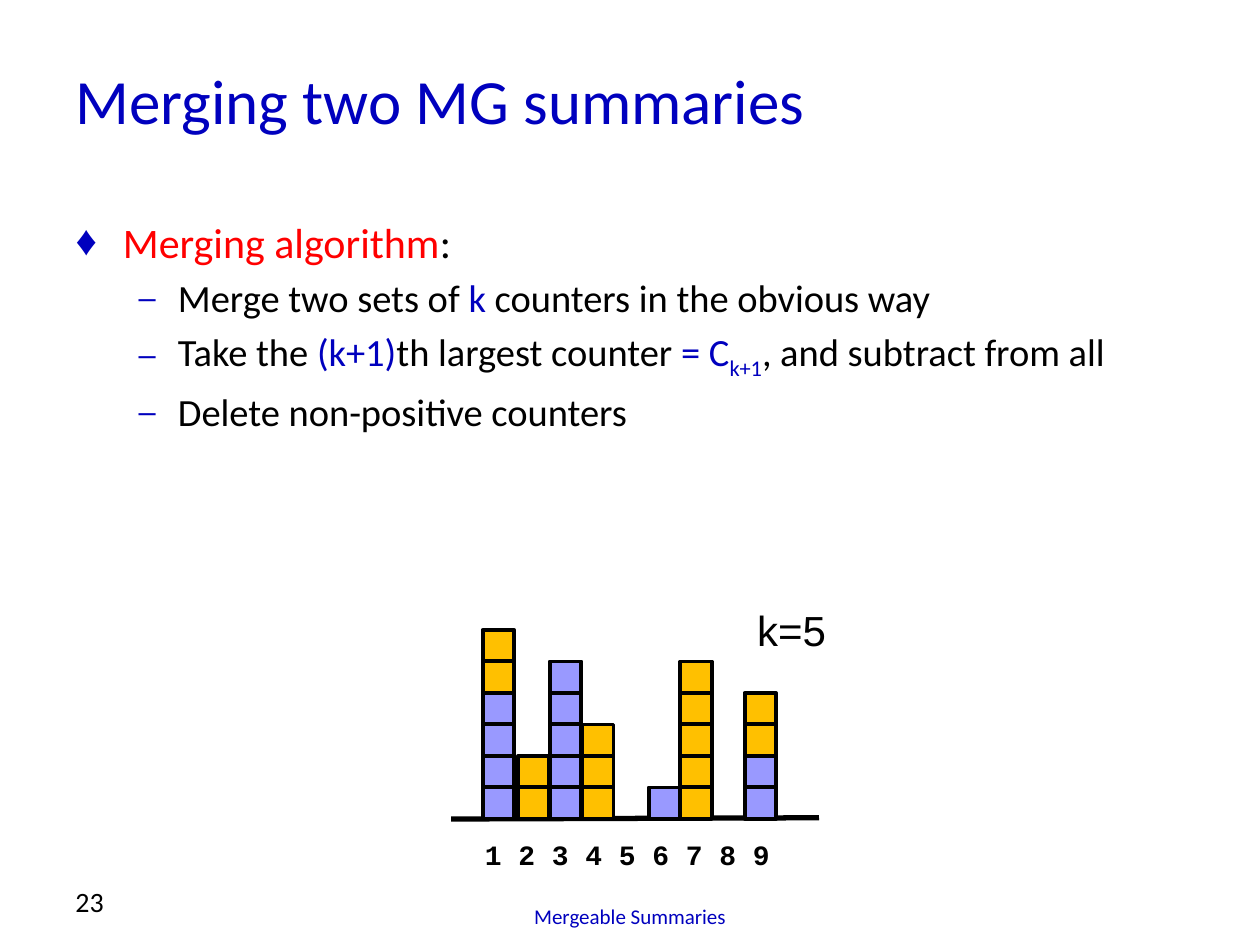
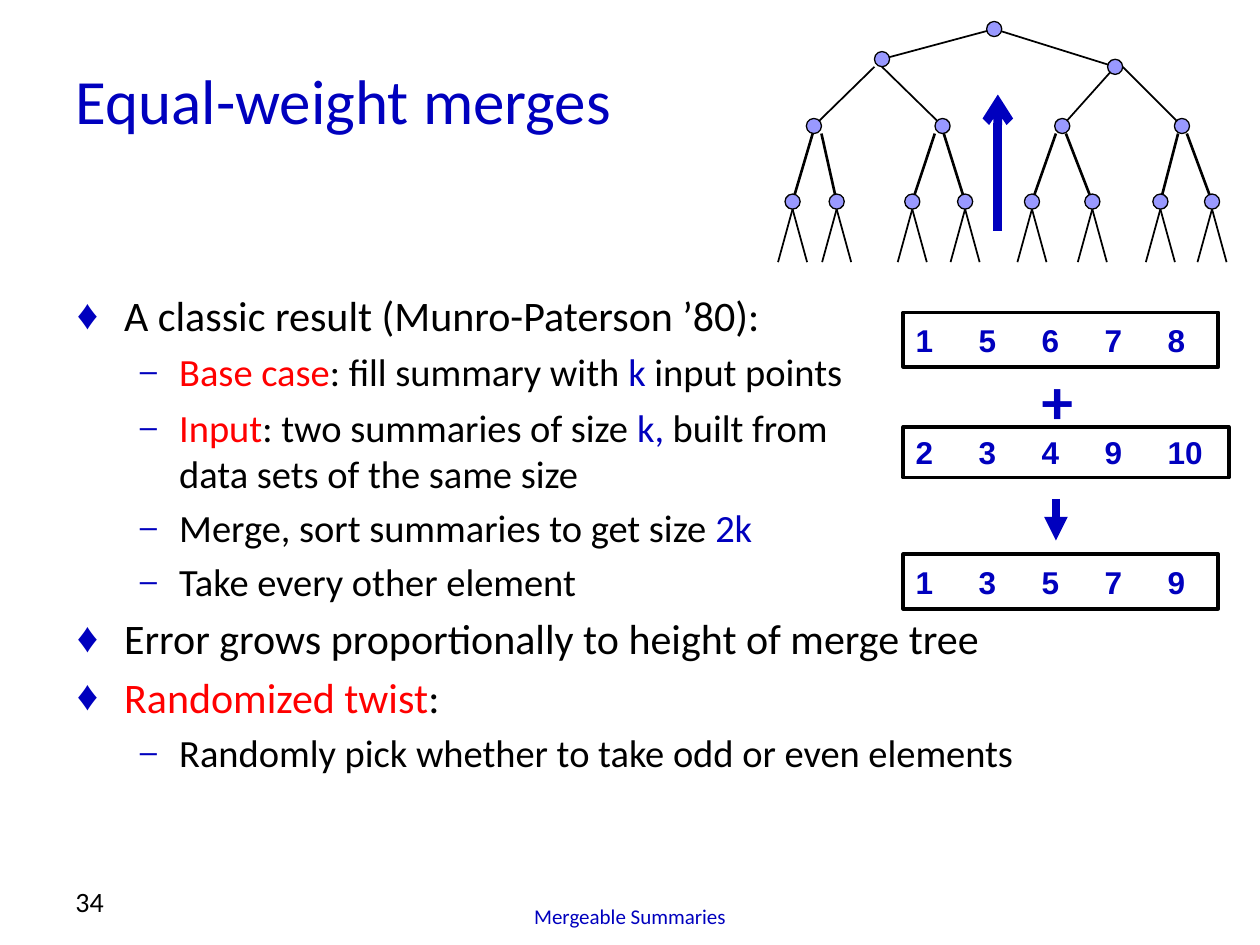
from lxml.etree import SubElement
from pptx import Presentation
from pptx.dml.color import RGBColor
from pptx.enum.shapes import MSO_CONNECTOR, MSO_SHAPE
from pptx.enum.text import MSO_ANCHOR, MSO_AUTO_SIZE, PP_ALIGN
from pptx.oxml.ns import qn
from pptx.util import Pt

# ---- Shared style ----
COLORS = {"blue": "0000BE", "red": "FF0000", "black": "000000",
          "lilac": "9999FF", "amber": "FFC000"}
FOOTER = "Mergeable Summaries"
TITLE_BOX = (36, 24, 684, 66)
FOOTER_BOX = (186, 498, 348, 36)
NUMBER_BOX = (36, 492, 168, 36)
# per level: text size, left margin, hanging indent, bullet, bullet size in percent
LEVELS = [(24, 27, 27, "♦", 100), (22, 58.5, 22.5, "–", 80)]

# ---- Content: (level, spans); a span is black text or (text, colour) ----
MERGING = {
    "title": "Merging two MG summaries", "number": "23",
    "body_box": (36, 120, 648, 180),
    "body": [
        (0, [("Merging algorithm", "red"), ":"]),
        (1, ["Merge two sets of ", ("k", "blue"), " counters in the obvious way"]),
        (1, ["Take the ", ("(k+1)", "blue"), "th largest counter ", ("= C", "blue"),
             ("k+1", "blue", "subscript"), ", and subtract from all"]),
        (1, ["Delete non-positive counters"]),
    ],
}
EQUAL_WEIGHT = {
    "title": "Equal-weight merges", "number": "34",
    "body_box": (36.7, 162, 648, 342),
    "body": [
        (0, ["A classic result (Munro-Paterson ’80):"]),
        (1, [("Base case", "red"), ": fill summary with ", ("k", "blue"), " input points"]),
        (1, [("Input", "red"), ": two summaries of size ", ("k,", "blue"), " built from",
             "\n", "data sets of the same size"]),
        (1, ["Merge, sort summaries to get size ", ("2k", "blue")]),
        (1, ["Take every other element"]),
        (0, ["Error grows proportionally to height of merge tree"]),
        (0, [("Randomized twist", "red"), ":"]),
        (1, ["Randomly pick whether to take odd or even elements"]),
    ],
}

# Counter stacks: (left edge, lilac cells, amber cells)
STACKS = [(275.8, 4, 2), (296, 0, 2), (314.2, 5, 0), (332.6, 0, 3),
          (370.8, 1, 0), (388.8, 0, 5), (425.5, 2, 2)]
CELL, BASELINE = 18, 468

# Summaries: (values, top, width, height)
SUMMARIES = [([1, 5, 6, 7, 8], 178.6, 180, 31),
             ([2, 3, 4, 9, 10], 244.1, 186, 28.8),
             ([1, 3, 5, 7, 9], 316.8, 180, 31)]
SUMMARY_LEFT, TAB_GAP = 516.2, 36

# Merge tree: (node x, x where its edge meets the parent), level by level
LEAVES = [(452.9, 464.4), (478.1, 469.4), (521.3, 534.2), (551.5, 539.3),
          (589.7, 603.4), (624.2, 609.1), (663.1, 673.2), (692.6, 678.2)]
MIDDLE = [(465.1, 499.7), (538.6, 504), (607, 637.2), (675.4, 641.5)]
UPPER = [(504, 33.8), (637.2, 38.2)]  # (x, y)
ROOT = (568.1, 16.6)
LEAF_Y, MIDDLE_Y, NODE = 115.2, 72, 8.64
TWIG_SPREAD, TWIG_BOTTOM = 8.3, 149.8


def rgb(name):
    return RGBColor.from_string(COLORS[name])


def style(span, size, color="black", font="Calibri", bold=False):
    span.font.size, span.font.name, span.font.bold = Pt(size), font, bold
    span.font.color.rgb = rgb(color)


def place(shape, box):
    shape.left, shape.top, shape.width, shape.height = map(Pt, box)


def add_label(page, text, box, size, color="black", font="Calibri", bold=False,
              anchor=MSO_ANCHOR.TOP, align=PP_ALIGN.LEFT):
    frame = page.shapes.add_textbox(*map(Pt, box)).text_frame
    frame.word_wrap = True
    frame.vertical_anchor = anchor
    frame.text = text
    para = frame.paragraphs[0]
    para.alignment = align
    style(para.runs[0], size, color, font, bold)


def add_box(shapes, kind, box, fill, line_width):
    shape = shapes.add_shape(kind, *map(Pt, box))
    shape.shadow.inherit = False
    if fill:
        shape.fill.solid()
        shape.fill.fore_color.rgb = rgb(fill)
    else:
        shape.fill.background()
    shape.line.color.rgb = rgb("black")
    shape.line.width = Pt(line_width)
    return shape


def add_line(shapes, start, end, width, color="black", head=None):
    line = shapes.add_connector(MSO_CONNECTOR.STRAIGHT, *map(Pt, (*start, *end)))
    line.line.color.rgb = rgb(color)
    line.line.width = Pt(width)
    properties = line._element.spPr
    if head:
        SubElement(properties.find(qn("a:ln")), qn("a:tailEnd"), type=head)
    SubElement(properties, qn("a:effectLst"))


def set_bullet(para, margin, hang, symbol, percent):
    props = para._p.get_or_add_pPr()
    props.set("marL", str(Pt(margin)))
    props.set("indent", str(-Pt(hang)))
    color = SubElement(props, qn("a:buClr"))
    SubElement(color, qn("a:srgbClr"), val=COLORS["blue"])
    SubElement(props, qn("a:buSzPct"), val=str(percent * 1000))
    SubElement(props, qn("a:buChar"), char=symbol)


def fill_body(frame, items):
    frame.auto_size = MSO_AUTO_SIZE.NONE
    for index, (level, spans) in enumerate(items):
        para = frame.add_paragraph() if index else frame.paragraphs[0]
        para.level = level
        size, *bullet = LEVELS[level]
        set_bullet(para, *bullet)
        for item in spans:
            if item == "\n":
                para.add_line_break()
                continue
            text, color, *script = (item, "black") if isinstance(item, str) else item
            span = para.add_run()
            span.text = text
            style(span, size, color)
            if script:
                span._r.get_or_add_rPr().set("baseline", "-25000")


def add_page(deck, content):
    page = deck.slides.add_slide(deck.slide_layouts[1])
    add_label(page, FOOTER, FOOTER_BOX, 12, "blue",
              anchor=MSO_ANCHOR.BOTTOM, align=PP_ALIGN.CENTER)
    add_label(page, content["number"], NUMBER_BOX, 16, anchor=MSO_ANCHOR.BOTTOM)
    title, body = page.shapes.title, page.placeholders[1]
    place(title, TITLE_BOX)
    title.text_frame.text = content["title"]
    title.text_frame.vertical_anchor = MSO_ANCHOR.MIDDLE
    para = title.text_frame.paragraphs[0]
    para.alignment = PP_ALIGN.LEFT
    style(para.runs[0], 36, "blue")
    place(body, content["body_box"])
    fill_body(body.text_frame, content["body"])
    return page


def draw_counters(page):
    add_line(page.shapes, (257.8, BASELINE), (468, BASELINE - 0.7), 3)
    for left, lilac, amber in STACKS:
        for row, fill in enumerate(["lilac"] * lilac + ["amber"] * amber, start=1):
            add_box(page.shapes, MSO_SHAPE.RECTANGLE,
                    (left, BASELINE - row * CELL, CELL, CELL), fill, 2.25)
    add_label(page, "1 2 3 4 5 6 7 8 9", (270, 475.2, 189.4, 26.6), 16,
              font="Courier New", bold=True)
    add_label(page, "k=5", (425.5, 342, 60, 36), 24, font="Arial")


def draw_summaries(page):
    for values, top, width, height in SUMMARIES:
        box = add_box(page.shapes, MSO_SHAPE.RECTANGLE,
                      (SUMMARY_LEFT, top, width, height), None, 2.25)
        box.text_frame.text = "\t".join(map(str, values))
        para = box.text_frame.paragraphs[0]
        para.alignment = PP_ALIGN.LEFT
        style(para.runs[0], 18, "blue", "Arial", True)
        tabs = SubElement(para._p.get_or_add_pPr(), qn("a:tabLst"))
        for stop in range(1, len(values)):
            SubElement(tabs, qn("a:tab"), pos=str(Pt(stop * TAB_GAP)), algn="l")
    add_label(page, "+", (588.2, 203, 30.2, 50.4), 36, "blue", bold=True)
    add_line(page.shapes, (603.4, 285.1), (603.4, 308.9), 4.5, "blue", "triangle")


def draw_tree(page):
    tree = page.shapes.add_group_shape().shapes
    half = NODE / 2
    # Edges from each level up to the next, then the twigs below the leaves
    for x, parent_x in LEAVES:
        add_line(tree, (x, LEAF_Y), (parent_x, MIDDLE_Y + half), 1.5)
    for index, (x, parent_x) in enumerate(MIDDLE):
        add_line(tree, (x, MIDDLE_Y), (parent_x, 38.2), 1)
    for x, y in UPPER:
        add_line(tree, (x, y), ROOT, 1)
    for x, _ in LEAVES:
        for side in (-1, 1):
            add_line(tree, (x + side * TWIG_SPREAD, TWIG_BOTTOM), (x, LEAF_Y + half), 1)
    # Nodes cover the edge ends
    nodes = [(x, LEAF_Y) for x, _ in LEAVES] + [(x, MIDDLE_Y) for x, _ in MIDDLE]
    for x, y in nodes + UPPER + [ROOT]:
        add_box(tree, MSO_SHAPE.OVAL, (x - half, y - half, NODE, NODE), "lilac", 0.75)
    add_line(page.shapes, (570.2, 131.8), (570.2, 54), 5, "blue", "arrow")


def main():
    deck = Presentation()
    deck.slide_width, deck.slide_height = Pt(720), Pt(540)
    draw_counters(add_page(deck, MERGING))
    page = add_page(deck, EQUAL_WEIGHT)
    draw_summaries(page)
    draw_tree(page)
    deck.save("out.pptx")


if __name__ == "__main__":
    main()
